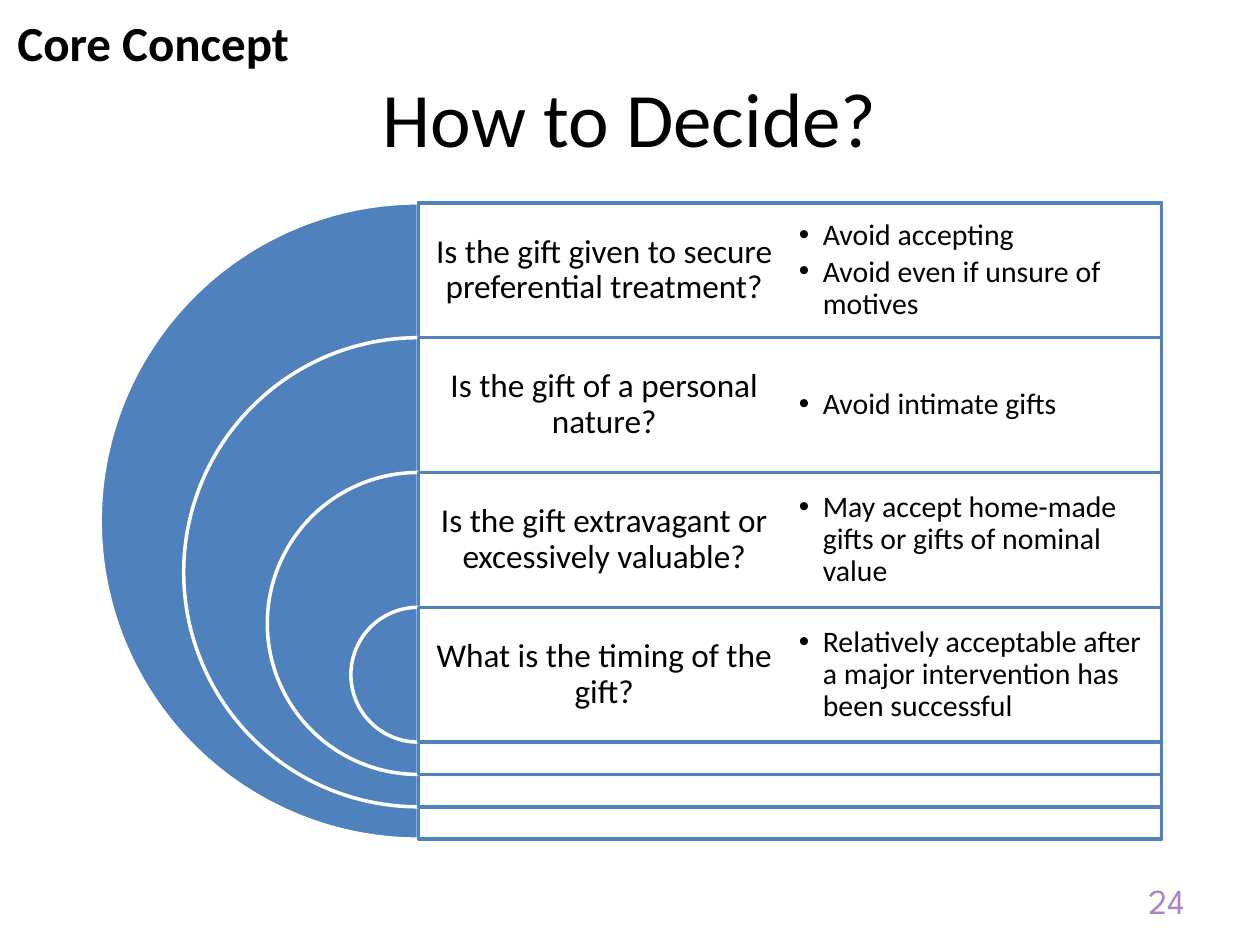
from lxml.etree import SubElement
from pptx import Presentation
from pptx.dml.color import RGBColor
from pptx.enum.shapes import MSO_SHAPE as Preset
from pptx.enum.text import MSO_ANCHOR as Anchor, MSO_AUTO_SIZE as AutoSize, PP_ALIGN as Align
from pptx.oxml.ns import qn
from pptx.util import Inches, Pt

COLORS = {"text": "000000", "paper": "FFFFFF", "blue": "4F81BD", "number": "AD84C6"}

DECISIONS = [
    ("Is the gift given to secure preferential treatment?",
     ["Avoid accepting", "Avoid even if unsure of motives"]),
    ("Is the gift of a personal nature?", ["Avoid intimate gifts"]),
    ("Is the gift extravagant or excessively valuable?",
     ["May accept home-made gifts or gifts of nominal value"]),
    ("What is the timing of the gift?",
     ["Relatively acceptable after a major intervention has been successful"]),
]

AXIS, TOP = 3.32, 1.61
PANEL_WIDTH, ROW_HEIGHT = 5.9, 1.07
OUTER_DIAMETER = 5.05


def rgb(name):
    return RGBColor.from_string(COLORS[name])


def add_bullet(paragraph, indent=0.19):
    properties = paragraph._p.get_or_add_pPr()
    properties.set("marL", str(Inches(indent)))
    properties.set("indent", str(-Inches(indent)))
    SubElement(properties, qn("a:buFont")).set("typeface", "Arial")
    SubElement(properties, qn("a:buChar")).set("char", "•")


def write(frame, lines, size, color="text", font="Calibri", bold=False, align=Align.LEFT,
          anchor=Anchor.MIDDLE, inset=None, spacing=None, after=None, bullets=False):
    """Fill a text frame with one paragraph per line."""
    frame.word_wrap = True
    frame.vertical_anchor = anchor
    if inset is not None:
        frame.margin_left = frame.margin_right = Inches(inset)
        frame.margin_top = frame.margin_bottom = Inches(inset)
    for index, line in enumerate(lines):
        paragraph = frame.add_paragraph() if index else frame.paragraphs[0]
        paragraph.alignment = align
        if spacing:
            paragraph.line_spacing = spacing
        if after and index < len(lines) - 1:
            paragraph.space_after = Pt(after)
        if bullets:
            paragraph.level = 1
            add_bullet(paragraph)
        run = paragraph.add_run()
        run.text = line
        run.font.name, run.font.size, run.font.bold = font, Pt(size), bold
        run.font.color.rgb = rgb(color)


class SlideBuilder:
    def __init__(self, deck):
        self.slide = deck.slides.add_slide(deck.slide_layouts[5])
        self.line_width = Pt(2)

    def title(self, text, left, top, width, height):
        heading = self.slide.shapes.title
        heading.left, heading.top = Inches(left), Inches(top)
        heading.width, heading.height = Inches(width), Inches(height)
        write(heading.text_frame, [text], 44, align=Align.CENTER)

    def text(self, lines, left, top, width, height, size, **style):
        box = self.slide.shapes.add_textbox(*map(Inches, (left, top, width, height)))
        write(box.text_frame, lines, size, **style)
        return box

    def shape(self, preset, left, top, width, height, fill, line):
        shape = self.slide.shapes.add_shape(preset, *map(Inches, (left, top, width, height)))
        shape.shadow.inherit = False
        shape.fill.solid()
        shape.fill.fore_color.rgb = rgb(fill)
        shape.line.color.rgb = rgb(line)
        shape.line.width = self.line_width
        return shape

    def half_disc(self, axis, top, diameter):
        """Left half of a disc whose flat side lies on the axis."""
        disc = self.shape(Preset.PIE, axis - diameter / 2, top, diameter, diameter,
                          "blue", "paper")
        disc.adjustments[0], disc.adjustments[1] = 54, 162

    def panel(self, left, top, width, height):
        panel = self.shape(Preset.RECTANGLE, left, top, width, height, "paper", "blue")
        color = panel.fill._xPr.find(qn("a:solidFill"))[0]
        SubElement(color, qn("a:alpha")).set("val", "90000")


def main():
    deck = Presentation()
    deck.slide_width, deck.slide_height = Inches(10), Inches(7.5)
    builder = SlideBuilder(deck)
    builder.title("How to Decide?", 0.5, 0.3, 9, 1.25)
    builder.text(["24"], 7.17, 6.95, 2.33, 0.4, 20, color="number",
                 font="League Spartan", align=Align.RIGHT)

    column = PANEL_WIDTH / 2
    shrink = (OUTER_DIAMETER - ROW_HEIGHT) / (len(DECISIONS) - 1)
    for index, (question, answers) in enumerate(DECISIONS):
        top = TOP + index * ROW_HEIGHT
        diameter = OUTER_DIAMETER - index * shrink
        builder.half_disc(AXIS, top, diameter)
        builder.panel(AXIS, top, PANEL_WIDTH, diameter)
        builder.text([question], AXIS, top, column, ROW_HEIGHT, 19,
                     align=Align.CENTER, inset=0.08, spacing=0.9)
        builder.text(answers, AXIS + column, top, column, ROW_HEIGHT, 17,
                     inset=0.07, spacing=0.9, after=2.5, bullets=True)

    label = builder.text(["Core Concept"], 0.04, 0.05, 3.75, 0.57, 28,
                         bold=True, anchor=Anchor.TOP)
    label.text_frame.auto_size = AutoSize.SHAPE_TO_FIT_TEXT
    deck.save("out.pptx")


if __name__ == "__main__":
    main()
